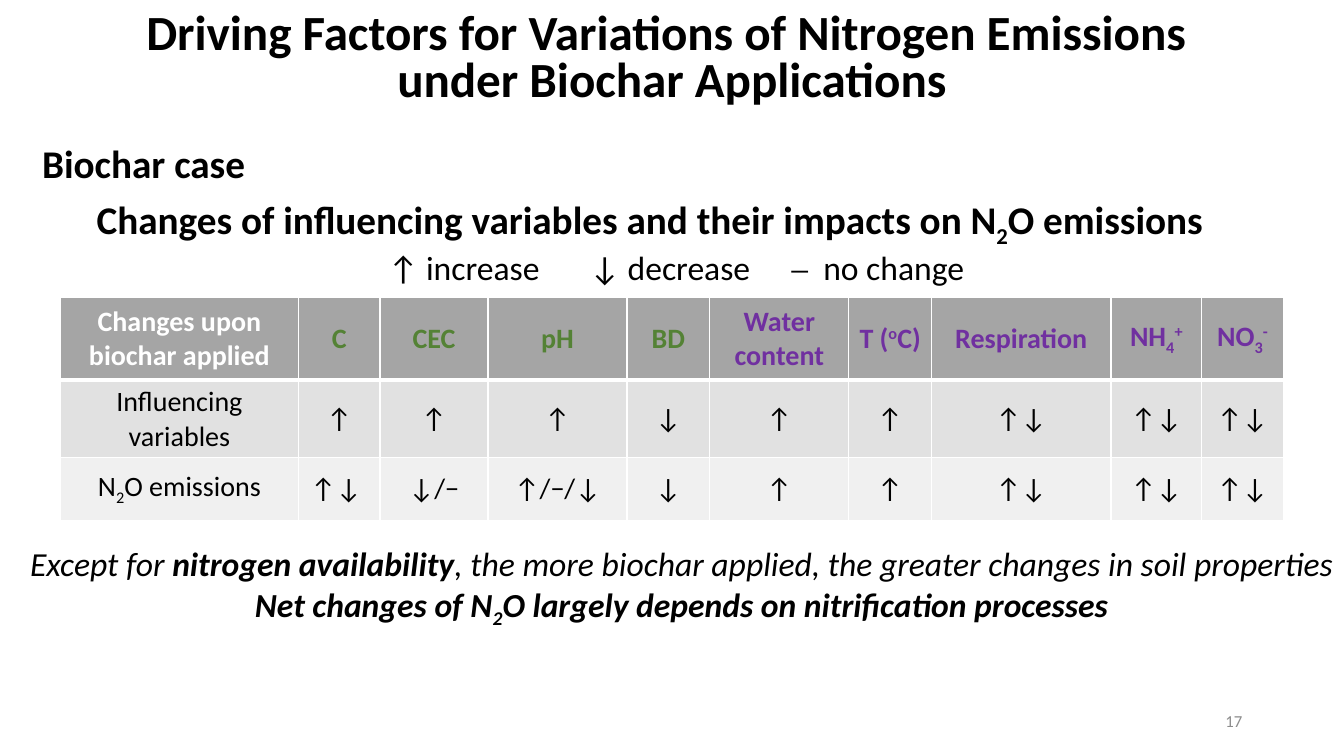
from lxml.etree import SubElement
from pptx import Presentation
from pptx.dml.color import RGBColor
from pptx.enum.shapes import MSO_SHAPE
from pptx.enum.text import MSO_ANCHOR, PP_ALIGN
from pptx.oxml.ns import qn
from pptx.util import Inches, Pt

COLORS = {
    "black": "000000", "white": "FFFFFF", "page": "8C8C8C",
    "green": "548235", "purple": "7030A0",
    "header": "A5A5A5", "odd": "E1E1E1", "even": "F0F0F0",
}
BASELINES = {"_": "-25000", "^": "30000"}


def write(paragraph, text, size, color="black", bold=False, italic=False, align=PP_ALIGN.CENTER):
    # "|" separates runs; a leading "_", "^" or "*" means subscript, superscript or bold
    paragraph.alignment = align
    for part in text.split("|"):
        mark = part[0] if part[0] in "_^*" else ""
        run = paragraph.add_run()
        run.text = part[len(mark):]
        run.font.name = "Calibri"
        run.font.size = Pt(size)
        run.font.bold = bold or mark == "*"
        run.font.italic = italic
        run.font.color.rgb = RGBColor.from_string(COLORS[color])
        if mark in BASELINES:
            run._r.get_or_add_rPr().set("baseline", BASELINES[mark])


def add_text(left, top, width, height, lines, size, wrap=True, anchor=MSO_ANCHOR.TOP, **style):
    box = slide.shapes.add_textbox(Inches(left), Inches(top), Inches(width), Inches(height))
    frame = box.text_frame
    frame.word_wrap = wrap
    frame.vertical_anchor = anchor
    for index, line in enumerate(lines):
        paragraph = frame.add_paragraph() if index else frame.paragraphs[0]
        write(paragraph, line, size, **style)


presentation = Presentation()
presentation.slide_width = Inches(13.33)
presentation.slide_height = Inches(7.5)
slide = presentation.slides.add_slide(presentation.slide_layouts[6])

title = slide.shapes.add_shape(MSO_SHAPE.RECTANGLE, 0, Inches(0.05), Inches(13.33), Inches(1.09))
title.shadow.inherit = False
title.fill.background()
title.line.color.rgb = RGBColor.from_string(COLORS["white"])
title.line.width = Pt(1)
title_frame = title.text_frame
title_frame.word_wrap = True
title_frame.vertical_anchor = MSO_ANCHOR.MIDDLE
title_lines = ["Driving Factors for Variations of Nitrogen Emissions ", "under Biochar Applications"]
for index, line in enumerate(title_lines):
    paragraph = title_frame.add_paragraph() if index else title_frame.paragraphs[0]
    paragraph.line_spacing = 0.8
    write(paragraph, line, 35.1, bold=True)

add_text(9.42, 6.95, 3, 0.4, ["17"], 12, color="page", anchor=MSO_ANCHOR.MIDDLE, align=PP_ALIGN.RIGHT)

column_widths = [2.36, 0.81, 1.07, 1.38, 0.82, 1.38, 0.82, 1.78, 0.9, 0.81]
row_heights = [0.82, 0.63, 0.63]
rows = [
    ["Changes upon biochar applied", "C", "CEC", "pH", "BD", "Water content",
     "T (|^o|C)", "Respiration", "NH|_4|^+", "NO|_3|^-"],
    ["Influencing variables", "↑", "↑", "↑", "↓", "↑", "↑", "↑↓", "↑↓", "↑↓"],
    ["N|_2|O emissions", "↑↓ ", "↓/−", "↑/−/↓", "↓", "↑", "↑", "↑↓", "↑↓", "↑↓"],
]
header_colors = ["white"] + ["green"] * 4 + ["purple"] * 5
row_fills = ["header", "odd", "even"]

table = slide.shapes.add_table(
    len(rows), len(column_widths), Inches(0.6), Inches(2.95),
    Inches(sum(column_widths)), Inches(sum(row_heights))).table
for column, width in zip(table.columns, column_widths):
    column.width = Inches(width)
for row, height in zip(table.rows, row_heights):
    row.height = Inches(height)

for row_index, texts in enumerate(rows):
    is_header = row_index == 0
    for column_index, text in enumerate(texts):
        cell = table.cell(row_index, column_index)
        cell.vertical_anchor = MSO_ANCHOR.MIDDLE
        border_widths = {"lnL": 1, "lnR": 1, "lnT": 3 if row_index == 1 else 1, "lnB": 3 if is_header else 1}
        for side, width in border_widths.items():
            border = SubElement(cell._tc.get_or_add_tcPr(), qn(f"a:{side}"), w=str(Pt(width)))
            SubElement(SubElement(border, qn("a:solidFill")), qn("a:srgbClr"), val=COLORS["white"])
        cell.fill.solid()
        cell.fill.fore_color.rgb = RGBColor.from_string(COLORS[row_fills[row_index]])
        color = header_colors[column_index] if is_header else "black"
        write(cell.text_frame.paragraphs[0], text, 20, color=color, bold=is_header)

add_text(0.13, 5.34, 13.26, 0.91, [
    "Except for |*nitrogen availability|, the more biochar applied, the greater changes in soil properties",
    "*Net changes of N|_2|*O largely depends on nitrification processes",
], 24, wrap=False, italic=True)
closing_box = slide.shapes[-1]
closing_box.text_frame.paragraphs[1].runs[1].font.bold = True

add_text(3.75, 2.4, 6.02, 0.5, ["↑ increase\t↓ decrease \t⎯  no change"], 24, align=PP_ALIGN.LEFT)
add_text(0.86, 1.89, 11.62, 0.57, ["Changes of influencing variables and their impacts on N|_2|O emissions"],
         28, wrap=False, bold=True, align=PP_ALIGN.LEFT)
add_text(0.32, 1.33, 2.24, 0.57, ["Biochar case"], 28, wrap=False, bold=True, align=PP_ALIGN.LEFT)

presentation.save("out.pptx")
